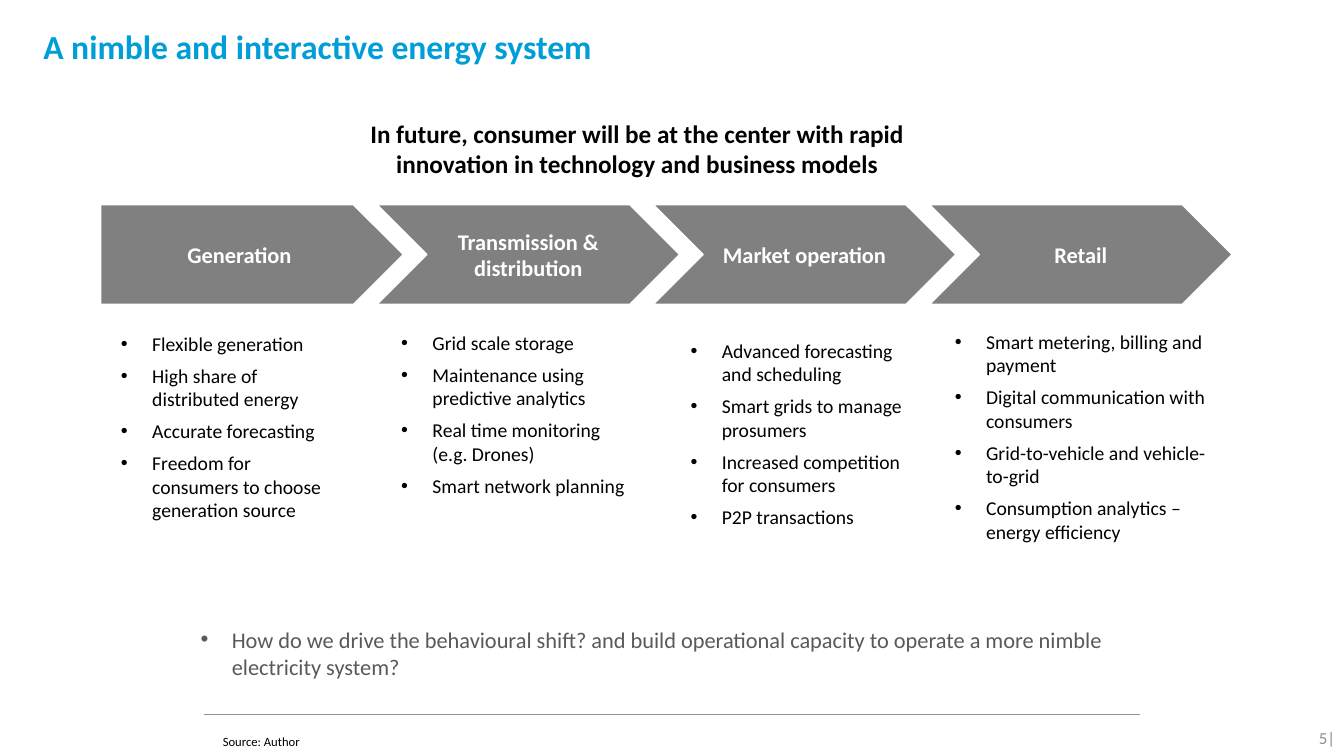
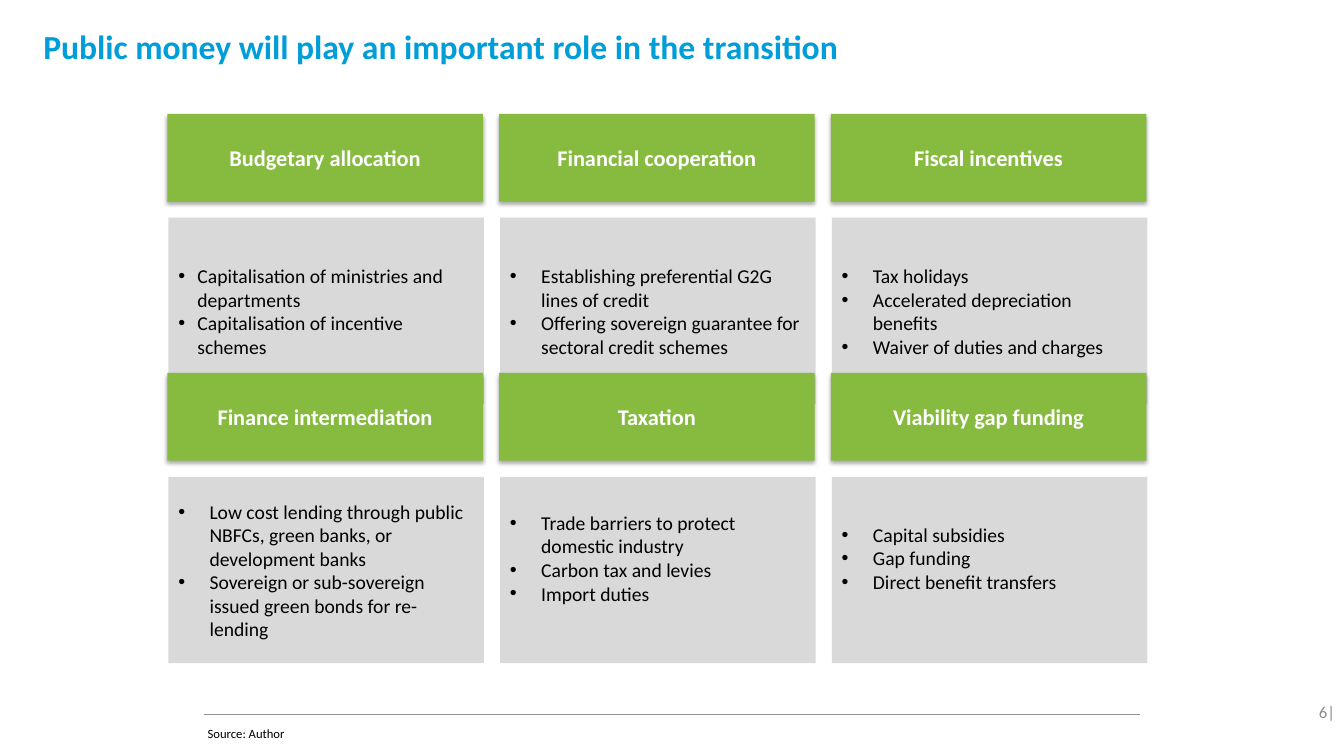
from dataclasses import dataclass

from lxml.etree import SubElement
from pptx import Presentation
from pptx.dml.color import RGBColor
from pptx.enum.shapes import MSO_CONNECTOR, MSO_SHAPE
from pptx.enum.text import MSO_ANCHOR, PP_ALIGN
from pptx.oxml.ns import qn
from pptx.util import Inches, Pt


@dataclass(frozen=True)
class Theme:
    font: str = "Calibri"
    title: str = "009ED8"
    text: str = "000000"
    muted: str = "595959"
    number: str = "8C8C8C"
    rule: str = "8F9194"
    stage: str = "808080"
    card_head: str = "86BB3F"
    card_body: str = "D9D9D9"
    white: str = "FFFFFF"
    title_size: int = 24
    lead_size: int = 18
    label_size: int = 16
    list_size: int = 14
    number_size: int = 12
    source_size: int = 9


THEME = Theme()
BULLET_INDENT = 0.31
DEFAULT_INSETS = (0.1, 0.05, 0.1, 0.05)
LEAD_INSETS = (0.08, 0.05, 0, 0.05)

# Chevron row: left, top, column pitch, width, height
STAGE_LEFT, STAGE_TOP, STAGE_PITCH = 1, 2.03, 2.74
STAGE_WIDTH, STAGE_HEIGHT = 3, 0.99

# Card grid: origin, pitches and part sizes
CARD_LEFT, CARD_TOP = 1.66, 1.13
COLUMN_PITCH, ROW_PITCH = 3.29, 2.57
CARD_WIDTH, HEAD_HEIGHT, BODY_HEIGHT = 3.13, 0.87, 1.85
BODY_SHIFT, BODY_DROP = 0.01, 1.03
CARD_COLUMNS = 3
EXTRA_LINE = 0.24

# Each stage: label, list left, list top, list width, items
STAGES = [
    ("Generation", 1.2, 3.29, 2.12, [
        "Flexible generation",
        "High share of distributed energy",
        "Accurate forecasting",
        "Freedom for consumers to choose generation source"]),
    ("Transmission & distribution", 3.98, 3.28, 2.26, [
        "Grid scale storage",
        "Maintenance using predictive analytics",
        "Real time monitoring (e.g. Drones)",
        "Smart network planning"]),
    ("Market operation", 6.85, 3.36, 2.16, [
        "Advanced forecasting and scheduling",
        "Smart grids to manage prosumers",
        "Increased competition for consumers",
        "P2P transactions"]),
    ("Retail", 9.47, 3.27, 2.49, [
        "Smart metering, billing and payment",
        "Digital communication with consumers",
        "Grid-to-vehicle and vehicle-to-grid",
        "Consumption analytics – energy efficiency"]),
]

# Each card: heading, bullet indent, extra space below the list, items
CARDS = [
    ("Budgetary allocation", 0.19, 0, [
        "Capitalisation of ministries and departments",
        "Capitalisation of incentive schemes"]),
    ("Financial cooperation", BULLET_INDENT, 0, [
        "Establishing preferential G2G lines of credit",
        "Offering sovereign guarantee for sectoral credit schemes"]),
    ("Fiscal incentives", BULLET_INDENT, 0, [
        "Tax holidays",
        "Accelerated depreciation benefits",
        "Waiver of duties and charges"]),
    ("Finance intermediation", BULLET_INDENT, 0, [
        "Low cost lending through public NBFCs, green banks, or development banks",
        "Sovereign or sub-sovereign issued green bonds for re-lending"]),
    ("Taxation", BULLET_INDENT, EXTRA_LINE, [
        "Trade barriers to protect domestic industry",
        "Carbon tax and levies",
        "Import duties"]),
    ("Viability gap funding", BULLET_INDENT, EXTRA_LINE, [
        "Capital subsidies",
        "Gap funding",
        "Direct benefit transfers"]),
]


def color(value):
    return RGBColor.from_string(value)


def add_bullet(paragraph, indent):
    properties = paragraph._p.get_or_add_pPr()
    properties.set("marL", str(Inches(indent)))
    properties.set("indent", str(-Inches(indent)))
    SubElement(properties, qn("a:buFont"), typeface="Arial")
    SubElement(properties, qn("a:buChar"), char="•")


def write(shape, texts, size, ink, bold=False, align=PP_ALIGN.LEFT,
          anchor=MSO_ANCHOR.TOP, insets=DEFAULT_INSETS, indent=None, after=0):
    """Fill a shape with one paragraph per text."""
    frame = shape.text_frame
    frame.word_wrap = True
    frame.vertical_anchor = anchor
    (frame.margin_left, frame.margin_top,
     frame.margin_right, frame.margin_bottom) = map(Inches, insets)
    for index, text in enumerate(texts):
        paragraph = frame.add_paragraph() if index else frame.paragraphs[0]
        paragraph.alignment = align
        paragraph.space_after = Pt(after)
        if indent is not None:
            add_bullet(paragraph, indent)
        run = paragraph.add_run()
        run.text = text
        run.font.name = THEME.font
        run.font.size = Pt(size)
        run.font.bold = bold
        run.font.color.rgb = color(ink)


def add_text(slide, box, texts, size, ink, **style):
    shape = slide.shapes.add_textbox(*map(Inches, box))
    write(shape, texts, size, ink, **style)


def add_block(slide, kind, box, fill, outline=None):
    shape = slide.shapes.add_shape(kind, *map(Inches, box))
    shape.shadow.inherit = False
    shape.fill.solid()
    shape.fill.fore_color.rgb = color(fill)
    if outline:
        shape.line.color.rgb = color(outline)
        shape.line.width = Pt(1)
    else:
        shape.line.fill.background()
    return shape


def add_label(shape, text):
    write(shape, [text], THEME.label_size, THEME.white, bold=True,
          align=PP_ALIGN.CENTER, anchor=MSO_ANCHOR.MIDDLE)


def add_soft_shadow(shape):
    effects = shape.element.spPr.find(qn("a:effectLst"))
    shadow = SubElement(effects, qn("a:outerShdw"), blurRad=str(Pt(3.1)),
                        dist=str(Pt(1.8)), dir="5400000", rotWithShape="0")
    tint = SubElement(shadow, qn("a:srgbClr"), val=THEME.text)
    SubElement(tint, qn("a:alpha"), val="35000")


def add_frame(presentation, title, number, number_top, source_at):
    """Start a slide with its rule, page number, title and source."""
    slide = presentation.slides.add_slide(presentation.slide_layouts[6])
    rule = slide.shapes.add_connector(
        MSO_CONNECTOR.STRAIGHT, *map(Inches, (2.02, 7.09, 11.31, 7.09)))
    rule.line.color.rgb = color(THEME.rule)
    rule.line.width = Pt(0.75)
    SubElement(rule.element.spPr, qn("a:effectLst"))
    add_text(slide, (12.49, number_top, 0.85, 0.4), [f"{number}|"],
             THEME.number_size, THEME.number,
             align=PP_ALIGN.RIGHT, anchor=MSO_ANCHOR.MIDDLE)
    add_text(slide, (0.43, 0.21, 12.34, 0.87), [title], THEME.title_size,
             THEME.title, bold=True, insets=(0, 0.05, 0, 0.05))
    add_text(slide, (*source_at, 8.97, 0.28), ["Source: Author"],
             THEME.source_size, THEME.text,
             anchor=MSO_ANCHOR.MIDDLE, insets=(0, 0.05, 0.1, 0.05))
    return slide


def add_stage(slide, column, label, left, top, width, items):
    """Add one step of the chain and the list below it."""
    kind = MSO_SHAPE.CHEVRON if column else MSO_SHAPE.PENTAGON
    box = (STAGE_LEFT + column * STAGE_PITCH, STAGE_TOP,
           STAGE_WIDTH, STAGE_HEIGHT)
    add_label(add_block(slide, kind, box, THEME.stage, THEME.white), label)
    add_text(slide, (left, top, width, 2.2), items, THEME.list_size,
             THEME.text, insets=(0, 0, 0, 0), indent=BULLET_INDENT, after=6)


def add_card(slide, index, heading, indent, extra, items):
    """Add one heading and its body at a cell of the card grid."""
    row, column = divmod(index, CARD_COLUMNS)
    left = CARD_LEFT + column * COLUMN_PITCH
    top = CARD_TOP + row * ROW_PITCH
    head = add_block(slide, MSO_SHAPE.RECTANGLE,
                     (left, top, CARD_WIDTH, HEAD_HEIGHT), THEME.card_head)
    add_soft_shadow(head)
    add_label(head, heading)
    body = add_block(slide, MSO_SHAPE.RECTANGLE,
                     (left + BODY_SHIFT, top + BODY_DROP,
                      CARD_WIDTH, BODY_HEIGHT), THEME.card_body)
    write(body, items, THEME.list_size, THEME.text, anchor=MSO_ANCHOR.MIDDLE,
          insets=(0.1, 0.05, 0.1, 0.05 + extra), indent=indent)


def build_energy_system(presentation):
    slide = add_frame(presentation, "A nimble and interactive energy system",
                      5, 7.12, (2.21, 7.22))
    add_text(slide, (3.32, 1.12, 5.92, 0.48),
             ["In future, consumer will be at the center with rapid "
              "innovation in technology and business models"],
             THEME.lead_size, THEME.text, bold=True, align=PP_ALIGN.CENTER,
             insets=LEAD_INSETS)
    for column, stage in enumerate(STAGES):
        add_stage(slide, column, *stage)
    add_text(slide, (1.91, 6.16, 9.38, 0.71),
             ["How do we drive the behavioural shift? and build operational "
              "capacity to operate a more nimble electricity system?"],
             THEME.label_size, THEME.muted, insets=LEAD_INSETS,
             indent=BULLET_INDENT)


def build_public_money(presentation):
    slide = add_frame(
        presentation,
        "Public money will play an important role in the transition",
        6, 6.86, (2.06, 7.14))
    for index, card in enumerate(CARDS):
        add_card(slide, index, *card)


def main():
    presentation = Presentation()
    presentation.slide_width = Inches(13.33)
    presentation.slide_height = Inches(7.5)
    build_energy_system(presentation)
    build_public_money(presentation)
    presentation.save("out.pptx")


if __name__ == "__main__":
    main()
